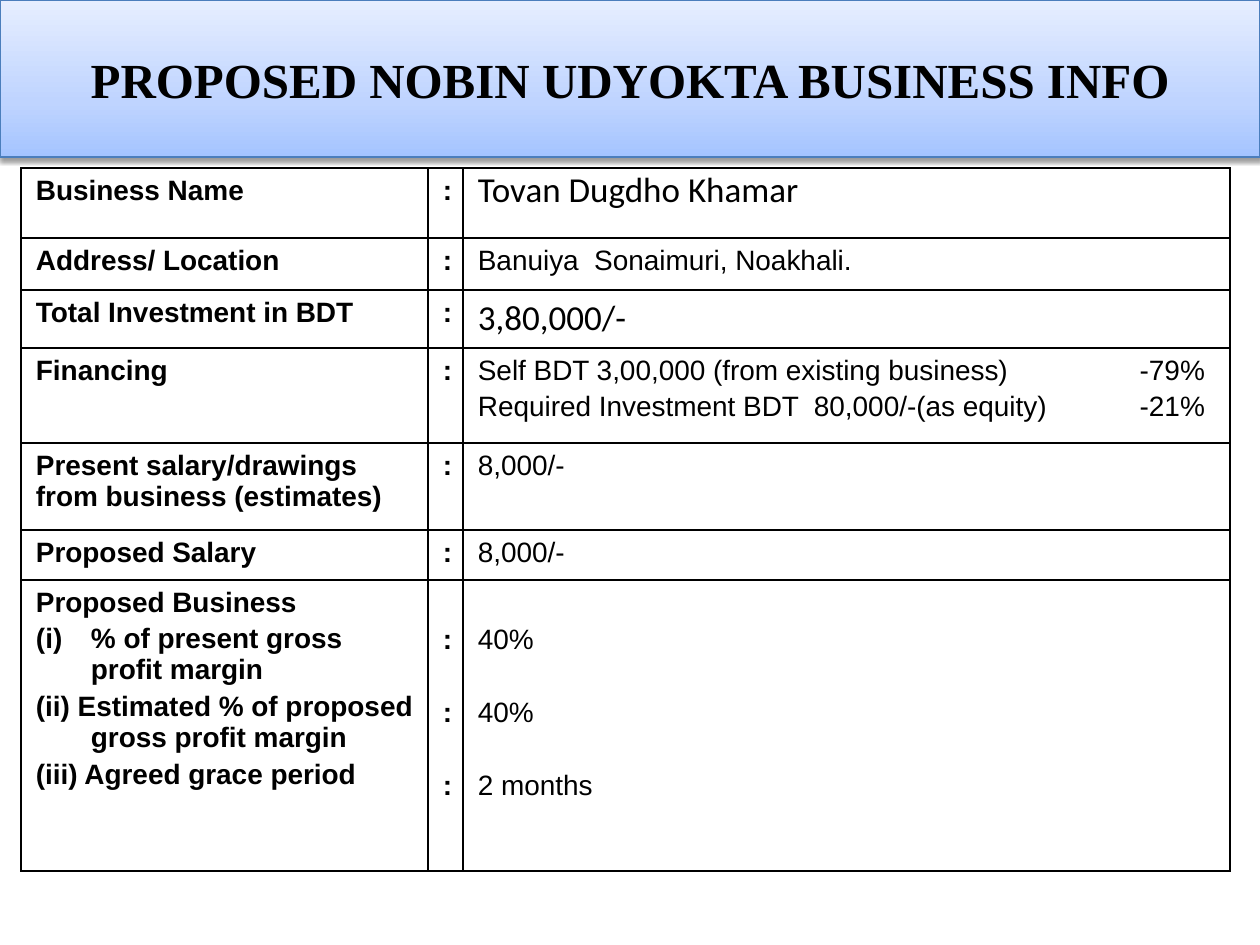
import copy
import dataclasses

import lxml.etree
import pptx
import pptx.dml.color
import pptx.enum.shapes
import pptx.enum.text
import pptx.oxml.ns
import pptx.util

PX = 914400 / 126
MARGIN_LEFT, MARGIN_RIGHT, MARGIN_Y = 15, 12, 7
BLACK = "000000"
COLUMN_WIDTHS = (407, 35, 767)
SHARE_TAB = 727
HANGING_INDENT = 55
LIST_TOP = 44  # drops the margin figures below the "Proposed Business" heading
LIST_GAP = 24  # points between the margin figures


@dataclasses.dataclass(frozen=True)
class CellText:
    lines: tuple[str, ...]
    bold: bool = False
    font: str = "Arial"
    size: int = 16
    gap: float = 3.2
    top: int = MARGIN_Y
    line_spacing: float = 1.0


@dataclasses.dataclass(frozen=True)
class InfoRow:
    height: int
    label: CellText
    colon: CellText
    value: CellText


def label(*lines: str) -> CellText:
    return CellText(lines, bold=True)


def value(*lines: str) -> CellText:
    return CellText(lines)


COLON = label(":")
ROWS = (
    InfoRow(70, label("Business Name"), COLON,
            CellText(("Tovan Dugdho Khamar",), font="Calibri", size=20, line_spacing=0.8)),
    InfoRow(52, label("Address/ Location"), COLON, value("Banuiya  Sonaimuri, Noakhali.")),
    InfoRow(58, label("Total Investment in BDT"), COLON,
            CellText(("3,80,000/-",), font="Calibri", size=20)),
    InfoRow(95, label("Financing"), COLON,
            value("Self BDT 3,00,000 (from existing business)\t-79%",
                  "Required Investment BDT  80,000/-(as equity)\t-21%")),
    InfoRow(87, label("Present salary/drawings from business (estimates)"), COLON,
            value("8,000/-")),
    InfoRow(50, label("Proposed Salary"), COLON, value("8,000/-")),
    InfoRow(291,
            label("Proposed Business", "% of present gross profit margin",
                  "(ii) Estimated % of proposed gross profit margin",
                  "(iii) Agreed grace period"),
            CellText((":",) * 3, bold=True, gap=LIST_GAP, top=LIST_TOP),
            CellText(("40%", "40%", "2 months"), gap=LIST_GAP, top=LIST_TOP)),
)


def px(length: int) -> pptx.util.Emu:
    return pptx.util.Emu(round(length * PX))


def rgb(colour: str) -> pptx.dml.color.RGBColor:
    return pptx.dml.color.RGBColor.from_string(colour)


def add_xml(parent, tag: str, **attributes):
    child = lxml.etree.SubElement(parent, pptx.oxml.ns.qn(tag))
    for name, setting in attributes.items():
        child.set(name, str(setting))
    return child


def style_run(run, font: str, size: int, bold: bool) -> None:
    run.font.name = font
    run.font.size = pptx.util.Pt(size)
    run.font.bold = bold
    run.font.color.rgb = rgb(BLACK)


def add_title_banner(slide, title: str) -> None:
    banner = slide.shapes.add_shape(
        pptx.enum.shapes.MSO_SHAPE.RECTANGLE, 0, 0, px(1260), px(157))
    banner.line.color.rgb = rgb("4B7EBC")
    banner.line.width = pptx.util.Pt(0.75)

    banner.fill.gradient()
    banner.fill.gradient_angle = 90
    properties = banner._element.spPr
    stop_list = properties.find(".//" + pptx.oxml.ns.qn("a:gsLst"))
    stop_list.append(copy.deepcopy(stop_list[-1]))
    colours = ((0, "A4C4FF"), (0.35, "BFD4FF"), (1, "E6EEFF"))
    for stop, (position, colour) in zip(banner.fill.gradient_stops, colours):
        stop.position = position
        stop.color.rgb = rgb(colour)

    banner.shadow.inherit = False
    effects = properties.find(pptx.oxml.ns.qn("a:effectLst"))
    shadow = add_xml(effects, "a:outerShdw", blurRad=pptx.util.Pt(3.1),
                     dist=pptx.util.Pt(1.6), dir=90 * 60000, rotWithShape=0)
    add_xml(add_xml(shadow, "a:srgbClr", val=BLACK), "a:alpha", val=38000)

    frame = banner.text_frame
    frame.word_wrap = True
    frame.vertical_anchor = pptx.enum.text.MSO_ANCHOR.MIDDLE
    frame.text = title
    heading = frame.paragraphs[0]
    heading.alignment = pptx.enum.text.PP_ALIGN.CENTER
    style_run(heading.runs[0], "Times New Roman", 28, True)


def add_borders(cell) -> None:
    properties = cell._tc.get_or_add_tcPr()
    for side in ("a:lnL", "a:lnR", "a:lnT", "a:lnB"):
        border = add_xml(properties, side, w=pptx.util.Pt(1))
        add_xml(add_xml(border, "a:solidFill"), "a:srgbClr", val=BLACK)


def fill_cell(cell, text: CellText) -> None:
    add_borders(cell)
    cell.fill.background()
    cell.margin_left, cell.margin_right = px(MARGIN_LEFT), px(MARGIN_RIGHT)
    cell.margin_top, cell.margin_bottom = px(text.top), px(MARGIN_Y)
    cell.text_frame.text = "\n".join(text.lines)
    for index, paragraph in enumerate(cell.text_frame.paragraphs):
        paragraph.space_before = pptx.util.Pt(text.gap if index else 0)
        paragraph.line_spacing = text.line_spacing
        for run in paragraph.runs:
            style_run(run, text.font, text.size, text.bold)


def align_shares(cell) -> None:
    """Right-align the percentages on one tab stop."""
    for paragraph in cell.text_frame.paragraphs:
        tabs = add_xml(paragraph._p.get_or_add_pPr(), "a:tabLst")
        add_xml(tabs, "a:tab", pos=px(SHARE_TAB), algn="r")


def indent_list(cell) -> None:
    """Hang the lines below the heading and number the first of them."""
    items = cell.text_frame.paragraphs[1:]
    for item in items:
        properties = item._p.get_or_add_pPr()
        properties.set("marL", str(px(HANGING_INDENT)))
        properties.set("indent", str(-px(HANGING_INDENT)))
    numbered = items[0]._p.get_or_add_pPr()
    add_xml(numbered, "a:buFont", typeface="+mj-lt")
    add_xml(numbered, "a:buAutoNum", type="romanLcParenBoth")


def add_info_table(slide, rows: tuple[InfoRow, ...]) -> None:
    table = slide.shapes.add_table(
        len(rows), len(COLUMN_WIDTHS), px(21), px(168),
        px(sum(COLUMN_WIDTHS)), px(sum(row.height for row in rows))).table
    table.first_row = table.horz_banding = False
    for column, width in zip(table.columns, COLUMN_WIDTHS):
        column.width = px(width)
    for table_row, row in zip(table.rows, rows):
        table_row.height = px(row.height)
        for cell, text in zip(table_row.cells, (row.label, row.colon, row.value)):
            fill_cell(cell, text)
    align_shares(table.cell(3, 2))
    indent_list(table.cell(6, 0))


def main() -> None:
    presentation = pptx.Presentation()
    presentation.slide_width, presentation.slide_height = px(1260), px(945)
    slide = presentation.slides.add_slide(presentation.slide_layouts[6])
    add_title_banner(slide, "PROPOSED NOBIN UDYOKTA BUSINESS INFO")
    add_info_table(slide, ROWS)
    presentation.save("out.pptx")


if __name__ == "__main__":
    main()
